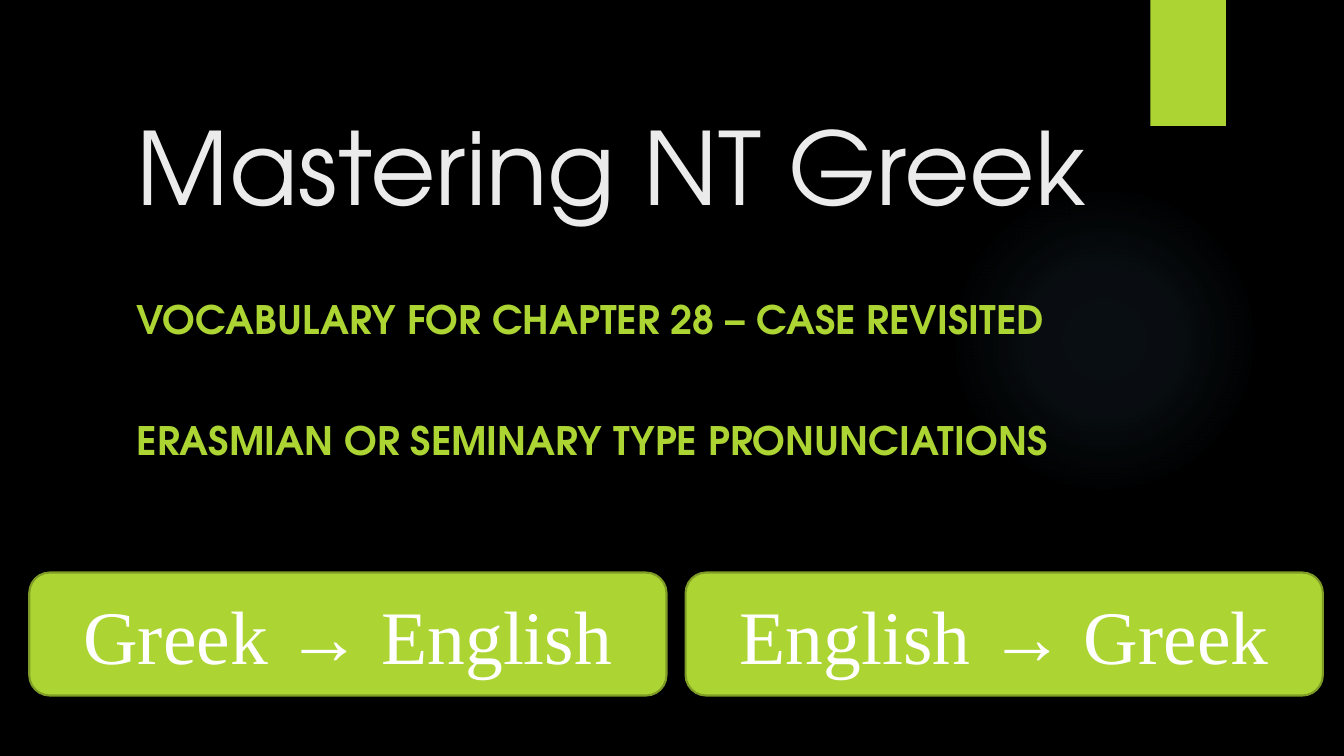
from lxml import etree
from pptx import Presentation
from pptx.dml.color import RGBColor
from pptx.enum import shapes, text
from pptx.oxml import parse_xml
from pptx.oxml.ns import nsdecls, qn
from pptx.util import Inches, Pt

BLACK = RGBColor(0x00, 0x00, 0x00)
WHITE = RGBColor(0xFF, 0xFF, 0xFF)
PALE = RGBColor(0xEB, 0xEB, 0xEB)
LIME = RGBColor(0xAC, 0xD4, 0x33)
OLIVE = RGBColor(0x7F, 0x9D, 0x26)
SKY = RGBColor(0x7A, 0xC4, 0xF0)
HEADING_FONT = "TeX Gyre Adventor"
BUTTON_FONT = "Times New Roman"


def add_shape(page, kind, left, top, width, height):
    shape = page.shapes.add_shape(
        kind, Inches(left), Inches(top), Inches(width), Inches(height))
    shape.shadow.inherit = False
    shape.line.fill.background()
    return shape


def add_span(para, words, font, size, color, bold=False):
    span = para.add_run()
    span.text = words
    span.font.name = font
    span.font.size = Pt(size)
    span.font.bold = bold
    span.font.color.rgb = color


def add_text_box(page, left, top, width, height, anchor):
    box = page.shapes.add_textbox(
        Inches(left), Inches(top), Inches(width), Inches(height))
    box.text_frame.word_wrap = True
    box.text_frame.vertical_anchor = anchor
    return box.text_frame


def add_glow(page, left, top, size):
    glow = add_shape(page, shapes.MSO_SHAPE.OVAL, left, top, size, size)
    # Radial fade to full transparency: position and opacity in percent
    stops = "".join(
        f'<a:gs pos="{position * 1000}"><a:srgbClr val="{SKY}">'
        f'<a:alpha val="{opacity * 1000}"/></a:srgbClr></a:gs>'
        for position, opacity in ((0, 7), (36, 6), (69, 0)))
    fade = parse_xml(
        f'<a:gradFill {nsdecls("a")}><a:gsLst>{stops}</a:gsLst>'
        '<a:path path="circle"><a:fillToRect l="50000" t="50000" '
        'r="50000" b="50000"/></a:path></a:gradFill>')
    glow._element.spPr.find(qn("a:prstGeom")).addnext(fade)


def add_ribbon(page, left, top, width, height):
    ribbon = add_shape(
        page, shapes.MSO_SHAPE.RECTANGLE, left, top, width, height)
    ribbon.fill.solid()
    ribbon.fill.fore_color.rgb = LIME
    # Soft shadow falling straight down
    effects = ribbon._element.spPr.find(qn("a:effectLst"))
    shadow = etree.SubElement(
        effects, qn("a:outerShdw"), blurRad=str(Pt(3)), dist=str(Pt(2)),
        dir="5400000", rotWithShape="0")
    color = etree.SubElement(shadow, qn("a:srgbClr"), val=str(BLACK))
    etree.SubElement(color, qn("a:alpha"), val="45000")


def add_title(page, left, top, width, height):
    frame = add_text_box(
        page, left, top, width, height, text.MSO_ANCHOR.BOTTOM)
    add_span(frame.paragraphs[0], "Mastering NT Greek",
             HEADING_FONT, 72, PALE)


def add_subtitle(page, left, top, width, height):
    frame = add_text_box(page, left, top, width, height, text.MSO_ANCHOR.TOP)
    chapter = frame.paragraphs[0]
    pronunciation = frame.add_paragraph()
    pronunciation.space_before = Pt(53)
    add_span(chapter, "VOCABULARY FOR CHAPTER 28 – CASE REVISITED",
             HEADING_FONT, 28, LIME, bold=True)
    add_span(pronunciation, "ERASMIAN OR SEMINARY TYPE PRONUNCIATIONS",
             HEADING_FONT, 28, LIME, bold=True)


def add_buttons(page, left, top, width, height, gap):
    button_width = (width - gap) / 2
    for column, label in enumerate(("Greek → English", "English → Greek")):
        button = add_shape(
            page, shapes.MSO_SHAPE.ROUNDED_RECTANGLE,
            left + column * (button_width + gap), top, button_width, height)
        button.fill.solid()
        button.fill.fore_color.rgb = LIME
        button.line.color.rgb = OLIVE
        button.line.width = Pt(1.5)
        frame = button.text_frame
        frame.word_wrap = True
        frame.vertical_anchor = text.MSO_ANCHOR.MIDDLE
        para = frame.paragraphs[0]
        para.alignment = text.PP_ALIGN.CENTER
        add_span(para, label, BUTTON_FONT, 54, WHITE)


def main():
    deck = Presentation()
    deck.slide_width, deck.slide_height = Inches(13.33), Inches(7.5)
    page = deck.slides.add_slide(deck.slide_layouts[6])
    page.background.fill.solid()
    page.background.fill.fore_color.rgb = BLACK

    # Backdrop
    add_glow(page, 9.41, 1.83, 3.08)
    add_ribbon(page, 11.41, 0, 0.75, 1.25)

    # Headings
    add_title(page, 1.26, 0.7, 10.04, 1.59)
    add_subtitle(page, 1.26, 2.88, 10.43, 2.69)

    # Direction buttons
    add_buttons(page, 0.29, 5.68, 12.83, 1.22, gap=0.19)

    deck.save("out.pptx")


if __name__ == "__main__":
    main()
